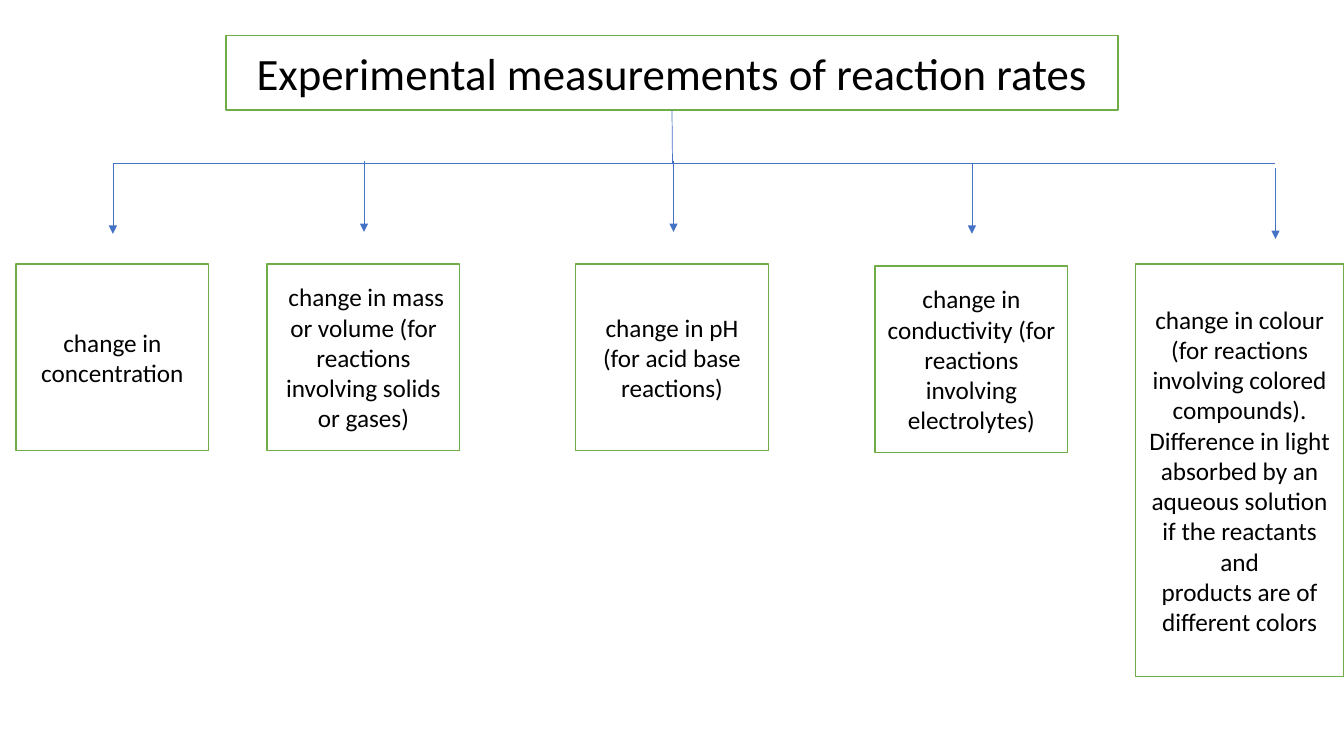
from dataclasses import dataclass

from lxml import etree
from pptx import Presentation
from pptx import util as u
from pptx.dml.color import RGBColor
from pptx.enum import shapes, text
from pptx.oxml.ns import qn


@dataclass(frozen=True)
class Theme:
    font: str = "Calibri"
    ink: RGBColor = RGBColor(0x00, 0x00, 0x00)
    paper: RGBColor = RGBColor(0xFF, 0xFF, 0xFF)
    border: RGBColor = RGBColor(0x70, 0xAD, 0x47)
    branch: RGBColor = RGBColor(0x44, 0x72, 0xC4)
    title_size: int = 32
    body_size: int = 18
    border_width: float = 1
    branch_width: float = 0.5


THEME = Theme()
BAR_Y = 1.62
ARROW_LENGTH = 0.7
BOX_WIDTH, BOX_HEIGHT = 1.91, 1.85

# Each method: wording, box (left, top, width, height), arrow start (x, y)
METHODS = [
    ("change in concentration",
     (0.16, 2.62, BOX_WIDTH, BOX_HEIGHT), (1.12, BAR_Y)),
    (" change in mass or volume (for reactions involving solids or gases)",
     (2.65, 2.62, BOX_WIDTH, BOX_HEIGHT), (3.61, 1.6)),
    ("change in pH (for acid base reactions)",
     (5.71, 2.62, BOX_WIDTH, BOX_HEIGHT), (6.68, 1.6)),
    ("change in conductivity (for reactions involving electrolytes)",
     (8.68, 2.64, BOX_WIDTH, BOX_HEIGHT), (9.64, BAR_Y)),
    ("change in colour (for reactions involving colored compounds). "
     "Difference in light absorbed by an aqueous solution if the reactants and\n"
     "products are of different colors",
     (11.26, 2.62, 2.07, 4.09), (12.65, 1.67)),
]


def style_box(box, words, size):
    """Give a box its fill, border and centred text."""
    box.fill.solid()
    box.fill.fore_color.rgb = THEME.paper
    box.line.color.rgb = THEME.border
    box.line.width = u.Pt(THEME.border_width)
    frame = box.text_frame
    frame.text = words
    frame.word_wrap = True
    frame.auto_size = text.MSO_AUTO_SIZE.NONE
    frame.vertical_anchor = text.MSO_ANCHOR.MIDDLE
    for para in frame.paragraphs:
        para.alignment = text.PP_ALIGN.CENTER
        for span in para.runs:
            span.font.name = THEME.font
            span.font.size = u.Pt(size)
            span.font.color.rgb = THEME.ink


def place_title(page, words, left, top, width, height):
    title = page.shapes.title
    title.left, title.top = u.Inches(left), u.Inches(top)
    title.width, title.height = u.Inches(width), u.Inches(height)
    style_box(title, words, THEME.title_size)
    return title


def add_method_box(page, words, left, top, width, height):
    box = page.shapes.add_shape(
        shapes.MSO_SHAPE.RECTANGLE, u.Inches(left), u.Inches(top),
        u.Inches(width), u.Inches(height))
    box.shadow.inherit = False
    style_box(box, words, THEME.body_size)


def add_branch(page, start, end, arrow=False):
    branch = page.shapes.add_connector(
        shapes.MSO_CONNECTOR.STRAIGHT,
        *(u.Inches(value) for value in (*start, *end)))
    branch.line.color.rgb = THEME.branch
    branch.line.width = u.Pt(THEME.branch_width)
    if arrow:
        outline = branch.line._get_or_add_ln()
        etree.SubElement(outline, qn("a:tailEnd"), type="triangle")
    etree.SubElement(branch._element.spPr, qn("a:effectLst"))
    return branch


def main():
    deck = Presentation()
    deck.slide_width, deck.slide_height = u.Inches(13.33), u.Inches(7.5)
    page = deck.slides.add_slide(deck.slide_layouts.get_by_name("Title Only"))

    # Heading
    title = place_title(page, "Experimental measurements of reaction rates",
                        2.24, 0.35, 8.85, 0.74)

    # Trunk and crossbar
    trunk = add_branch(page, (6.67, 1.09), (6.67, BAR_Y))
    trunk.begin_connect(title, 2)
    first_x, last_x = METHODS[0][2][0], METHODS[-1][2][0]
    add_branch(page, (first_x, BAR_Y), (last_x, BAR_Y))

    # Arrows and method boxes
    for words, place, (x, y) in METHODS:
        add_branch(page, (x, y), (x, y + ARROW_LENGTH), arrow=True)
        add_method_box(page, words, *place)

    deck.save("out.pptx")


if __name__ == "__main__":
    main()
